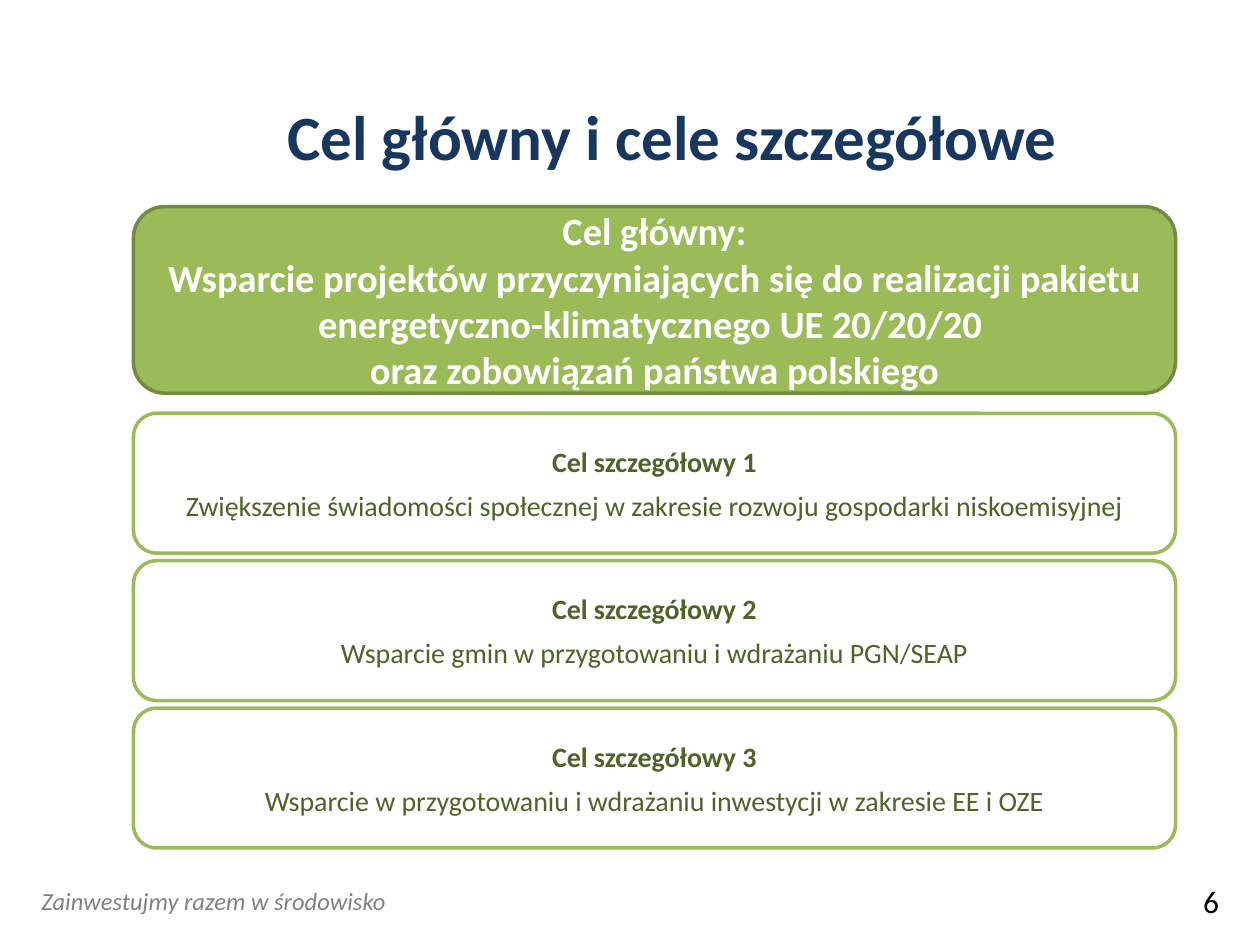
from pptx import Presentation
from pptx.dml.color import RGBColor
from pptx.enum.shapes import MSO_SHAPE
from pptx.enum.text import MSO_ANCHOR, PP_ALIGN
from pptx.util import Inches, Pt

ROUNDED = MSO_SHAPE.ROUNDED_RECTANGLE
MIDDLE, TOP = MSO_ANCHOR.MIDDLE, MSO_ANCHOR.TOP
CENTER, LEFT = PP_ALIGN.CENTER, PP_ALIGN.LEFT

COLORS = {
    "navy": "17375E",
    "green": "9BBB59",
    "dark_green": "738A42",
    "olive": "4F6228",
    "gray": "808080",
    "white": "FFFFFF",
    "black": "000000",
}

GOALS = [
    ("Cel szczegółowy 1",
     "Zwiększenie świadomości społecznej w zakresie rozwoju gospodarki niskoemisyjnej"),
    ("Cel szczegółowy 2",
     "Wsparcie gmin w przygotowaniu i wdrażaniu PGN/SEAP"),
    ("Cel szczegółowy 3",
     "Wsparcie w przygotowaniu i wdrażaniu inwestycji w zakresie EE i OZE"),
]
CARD_LEFT, CARD_WIDTH = 1.06, 8.27
GOAL_TOP, GOAL_HEIGHT, GOAL_GAP = 3.28, 1.11, 0.06


class SlideBuilder:
    """Holds the style and the current slide."""

    font_name = "Calibri"

    def __init__(self, page):
        self.page = page

    def color(self, name):
        return RGBColor.from_string(COLORS[name])

    def fill_frame(self, frame, lines, color, align, anchor, space_after=0):
        """Fill a frame with (text, font format) lines, one paragraph each."""
        frame.word_wrap = True
        frame.vertical_anchor = anchor
        for index, (text, font_format) in enumerate(lines):
            para = frame.paragraphs[0] if index == 0 else frame.add_paragraph()
            para.alignment = align
            if index < len(lines) - 1:
                para.space_after = Pt(space_after)
            para.text = text
            for span in para.runs:
                span.font.name = self.font_name
                span.font.color.rgb = self.color(color)
                for name, value in font_format.items():
                    setattr(span.font, name, value)

    def text(self, left, top, width, height, text, color, font_format,
             align=LEFT, anchor=TOP):
        box = self.page.shapes.add_textbox(
            Inches(left), Inches(top), Inches(width), Inches(height))
        self.fill_frame(box.text_frame, [(text, font_format)], color, align, anchor)

    def card(self, top, height, fill, line, lines, color, space_after=0):
        box = self.page.shapes.add_shape(
            ROUNDED, Inches(CARD_LEFT), Inches(top), Inches(CARD_WIDTH), Inches(height))
        box.shadow.inherit = False
        box.fill.solid()
        box.fill.fore_color.rgb = self.color(fill)
        box.line.color.rgb = self.color(line)
        box.line.width = Pt(2)
        self.fill_frame(box.text_frame, lines, color, CENTER, MIDDLE, space_after)


def main():
    deck = Presentation()
    deck.slide_width, deck.slide_height = Inches(10), Inches(7.5)
    builder = SlideBuilder(deck.slides.add_slide(deck.slide_layouts[6]))

    # Title
    builder.text(1.17, 0.45, 8.33, 1.25, "Cel główny i cele szczegółowe", "navy",
                 {"size": Pt(36), "bold": True}, CENTER, MIDDLE)

    # Main goal
    main_format = {"size": Pt(22), "bold": True}
    builder.card(1.64, 1.48, "green", "dark_green", [
        ("Cel główny:", main_format),
        ("Wsparcie projektów przyczyniających się do realizacji pakietu "
         "energetyczno-klimatycznego UE 20/20/20 \voraz zobowiązań państwa polskiego",
         main_format),
    ], "white")

    # Specific goals
    for index, (heading, description) in enumerate(GOALS):
        top = GOAL_TOP + index * (GOAL_HEIGHT + GOAL_GAP)
        builder.card(top, GOAL_HEIGHT, "white", "green", [
            (heading, {"size": Pt(16), "bold": True}),
            (description, {"size": Pt(16), "bold": False}),
        ], "olive", space_after=6)

    # Footer and page number
    builder.text(0.23, 6.98, 4.22, 0.34, "Zainwestujmy razem w środowisko", "gray",
                 {"size": Pt(14), "italic": True})
    builder.text(9.45, 6.95, 0.55, 0.4, "6", "black", {"size": Pt(18)})

    deck.save("out.pptx")


if __name__ == "__main__":
    main()
